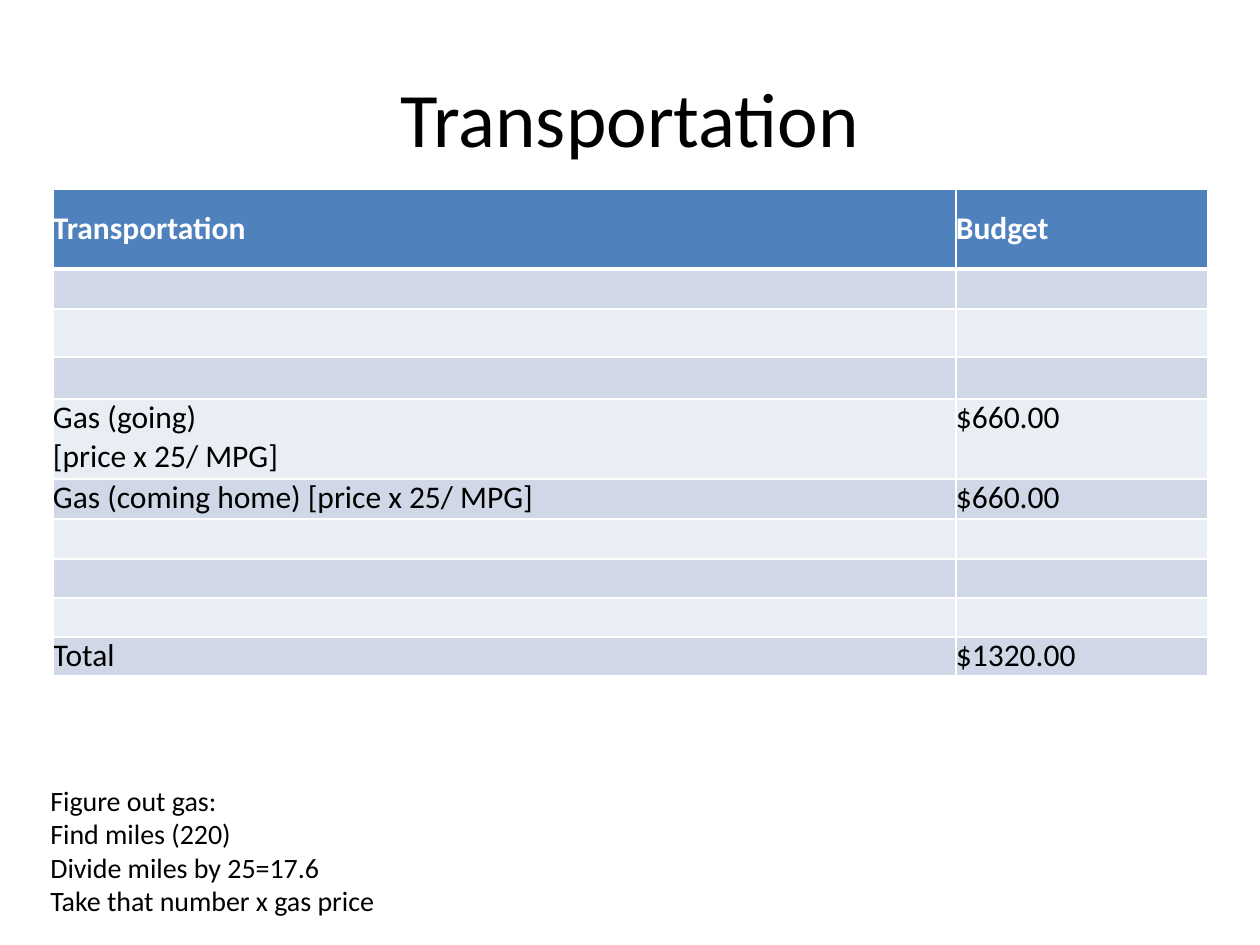
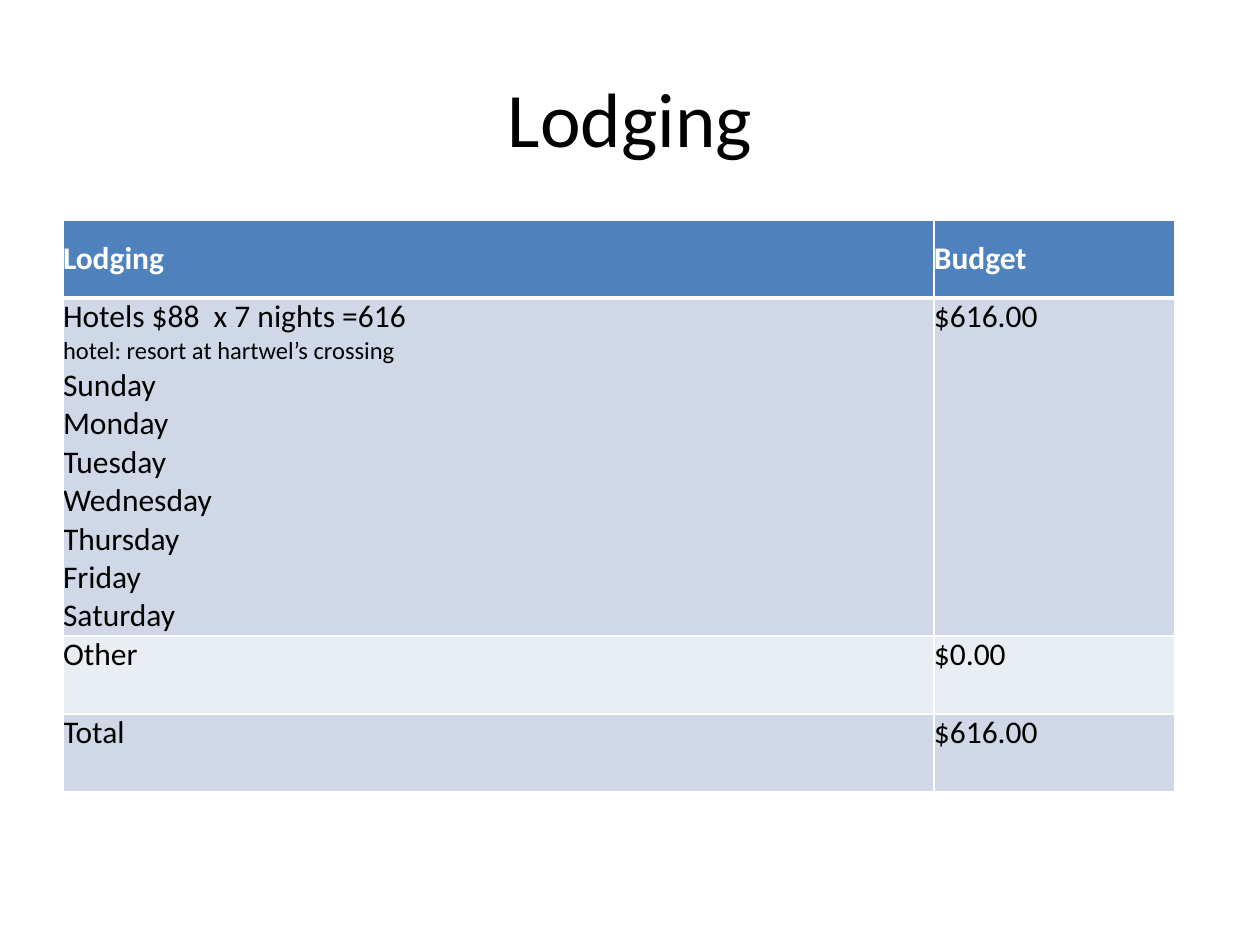
import pptx
import pptx.util
import pptx.dml.color
import pptx.enum.text
import pptx.oxml
import pptx.oxml.ns

EMU_PER_PX = 914400 / 126
FONT = "Calibri"
COLORS = {
    "text": "000000",
    "white": "FFFFFF",
    "header": "4F81BD",
    "band_dark": "D0D8E8",
    "band_light": "E9EDF4",
}
TITLE_SIZE, TABLE_SIZE, DETAIL_SIZE, NOTE_SIZE = 44, 18, 14, 16
THIN, THICK = 1, 3
WEEKDAYS = ["Sunday", "Monday", "Tuesday", "Wednesday", "Thursday", "Friday", "Saturday"]


def px(length):
    return pptx.util.Emu(round(length * EMU_PER_PX))


def rgb(color):
    return pptx.dml.color.RGBColor.from_string(COLORS[color])


class BudgetDeck:
    def __init__(self):
        self.presentation = pptx.Presentation()
        self.presentation.slide_width = px(1260)
        self.presentation.slide_height = px(945)
        self.slide = None

    def add_slide(self, heading):
        title_only = self.presentation.slide_layouts[5]
        self.slide = self.presentation.slides.add_slide(title_only)
        title = self.slide.shapes.title
        title.left, title.top, title.width, title.height = map(px, (63, 38, 1134, 157))
        title.text_frame.vertical_anchor = pptx.enum.text.MSO_ANCHOR.MIDDLE
        self.add_lines(title.text_frame, [heading], TITLE_SIZE,
                       align=pptx.enum.text.PP_ALIGN.CENTER)

    def add_lines(self, frame, lines, size, color="text", bold=False, align=None):
        """Add one paragraph per line; a (text, size) pair overrides the size."""
        for index, line in enumerate(lines):
            text, line_size = line if isinstance(line, tuple) else (line, size)
            paragraph = frame.add_paragraph() if index else frame.paragraphs[0]
            paragraph.alignment = align
            run = paragraph.add_run()
            run.text = text
            run.font.name = FONT
            run.font.size = pptx.util.Pt(line_size)
            run.font.bold = bold
            run.font.color.rgb = rgb(color)

    def add_note(self, lines, left, top, width, height):
        note = self.slide.shapes.add_textbox(px(left), px(top), px(width), px(height))
        note.text_frame.word_wrap = False
        note.text_frame.auto_size = pptx.enum.text.MSO_AUTO_SIZE.SHAPE_TO_FIT_TEXT
        self.add_lines(note.text_frame, lines, NOTE_SIZE)

    def add_budget_table(self, left, top, widths, heights, rows):
        """Draw a banded table with a header row; each cell is a list of lines."""
        table = self.slide.shapes.add_table(
            len(rows), len(widths), px(left), px(top),
            px(sum(widths)), px(sum(heights))).table
        for column, width in zip(table.columns, widths):
            column.width = px(width)
        for row, height in zip(table.rows, heights):
            row.height = px(height)
        for row_index, row in enumerate(rows):
            for column_index, lines in enumerate(row):
                self.fill_cell(table.cell(row_index, column_index), row_index, lines)

    def fill_cell(self, cell, row_index, lines):
        is_header = row_index == 0
        cell.margin_left = cell.margin_right = cell.margin_top = cell.margin_bottom = 0
        self.add_borders(cell, top=THICK if row_index == 1 else THIN,
                         bottom=THICK if is_header else THIN)
        band = "band_dark" if row_index % 2 else "band_light"
        cell.fill.solid()
        cell.fill.fore_color.rgb = rgb("header" if is_header else band)
        anchors = pptx.enum.text.MSO_ANCHOR
        cell.vertical_anchor = anchors.MIDDLE if is_header else anchors.TOP
        self.add_lines(cell.text_frame, lines, TABLE_SIZE,
                       "white" if is_header else "text", bold=is_header)

    def add_borders(self, cell, top, bottom):
        properties = cell._tc.get_or_add_tcPr()
        for side, points in (("L", THIN), ("R", THIN), ("T", top), ("B", bottom)):
            properties.append(pptx.oxml.parse_xml(
                f'<a:ln{side} {pptx.oxml.ns.nsdecls("a")} w="{pptx.util.Pt(points)}">'
                f'<a:solidFill><a:srgbClr val="{COLORS["white"]}"/></a:solidFill>'
                f'</a:ln{side}>'))


def main():
    deck = BudgetDeck()
    unused = [[], []]

    deck.add_slide("Transportation")
    deck.add_budget_table(
        53, 189, [903, 252], [80, 40, 48, 42, 80, 40, 40, 39, 39, 39],
        [
            [["Transportation"], ["Budget"]],
            *[unused] * 3,
            [["Gas (going)", "[price x 25/ MPG]"], ["$660.00"]],
            [["Gas (coming home) [price x 25/ MPG]"], ["$660.00"]],
            *[unused] * 3,
            [["Total"], ["$1320.00"]],
        ])
    deck.add_note(
        ["Figure out gas:", "Find miles (220)", "Divide miles by 25=17.6",
         "Take that number x gas price"],
        38, 777, 353, 149)

    deck.add_slide("Lodging")
    hotel = ["Hotels $88  x 7 nights =616",
             ("hotel: resort at hartwel’s crossing", DETAIL_SIZE), *WEEKDAYS]
    deck.add_budget_table(
        63, 220, [871, 241], [78, 338, 78, 78],
        [
            [["Lodging"], ["Budget"]],
            [hotel, ["$616.00"]],
            [["Other"], ["$0.00"]],
            [["Total"], ["$616.00"]],
        ])

    deck.presentation.save("out.pptx")


if __name__ == "__main__":
    main()
